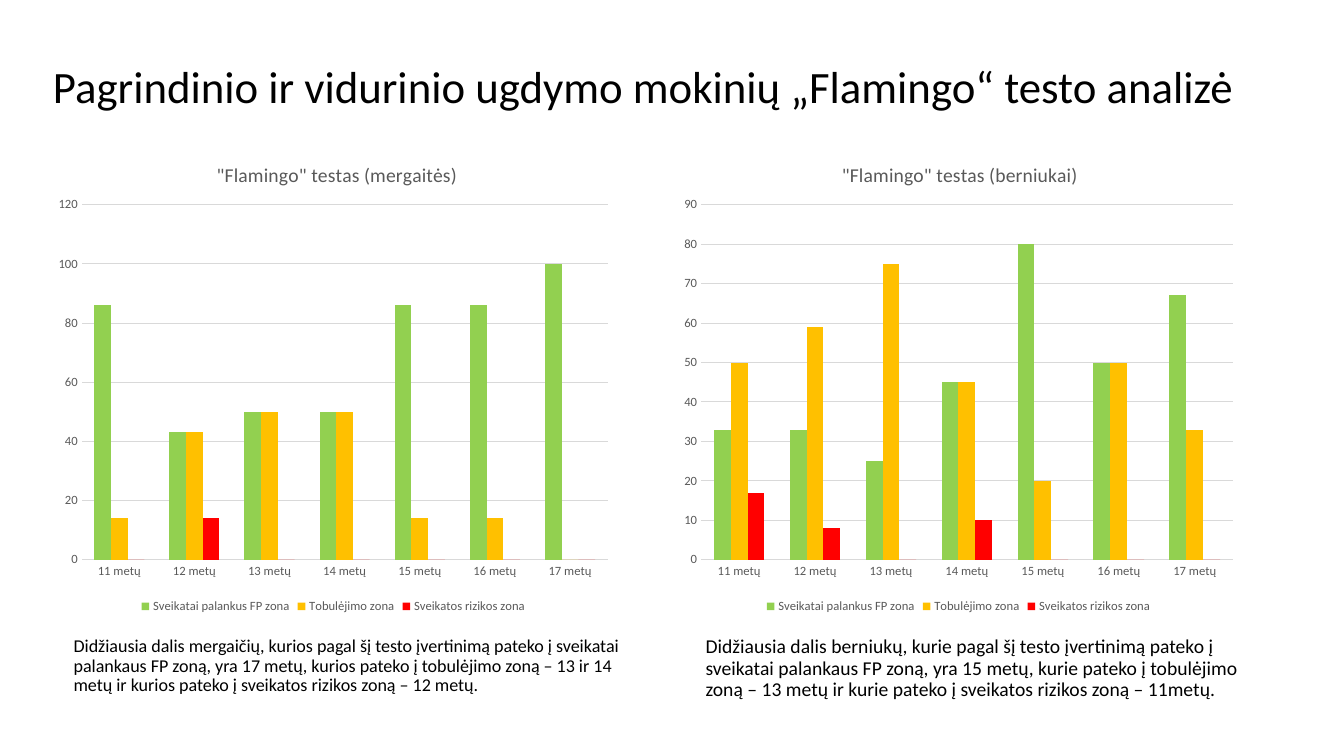
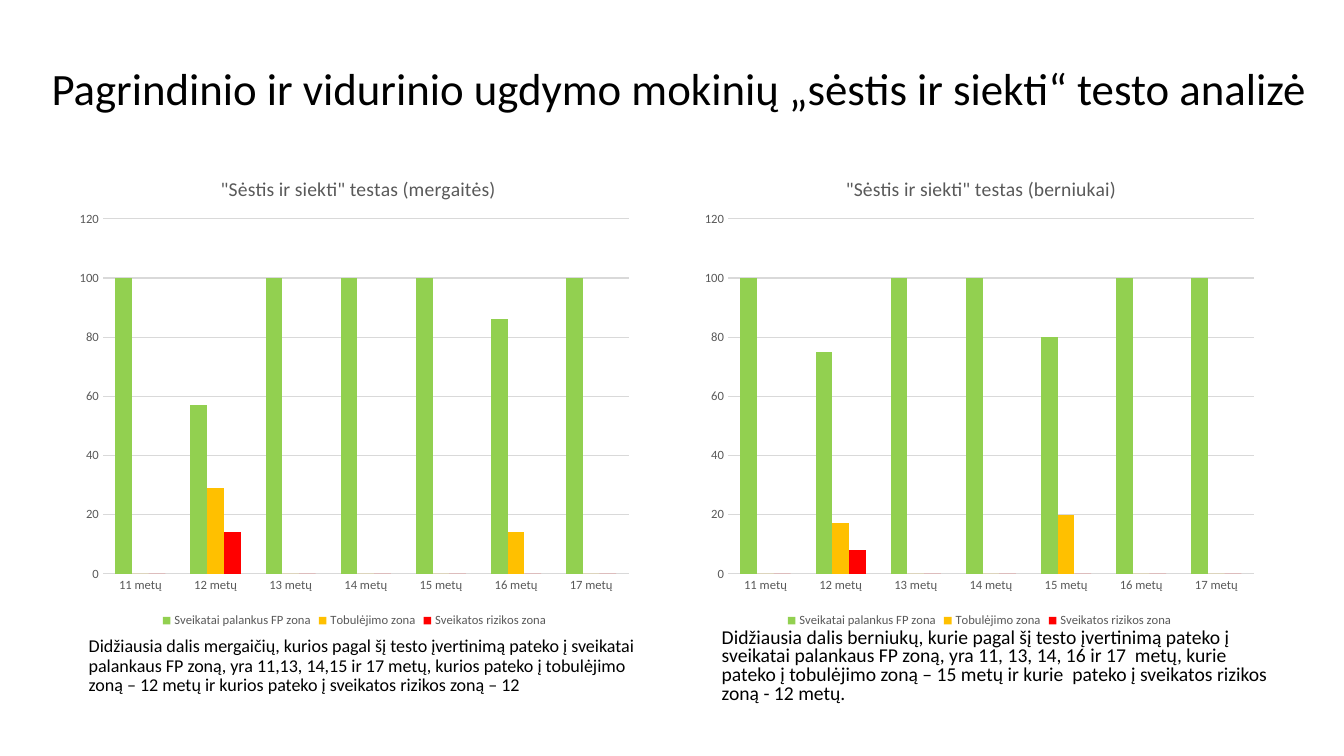
from dataclasses import dataclass

from lxml import etree
from pptx import Presentation
from pptx import util as u
from pptx.chart.data import CategoryChartData
from pptx.dml.color import RGBColor
from pptx.enum import chart as ch
from pptx.enum import text as tx
from pptx.oxml import ns


@dataclass(frozen=True)
class Theme:
    font: str = "Calibri"
    ink: str = "000000"
    muted: str = "595959"
    grid: str = "D9D9D9"
    zones: tuple = ("92D050", "FFC000", "FF0000")
    title_size: float = 32
    left_size: float = 12.9
    right_size: float = 14
    chart_title_size: float = 14
    label_size: float = 9


THEME = Theme()
AGES = [f"{age} metų" for age in range(11, 18)]
ZONES = ("Sveikatai palankus FP zona", "Tobulėjimo zona", "Sveikatos rizikos zona")
CHART_WIDTH, CHART_HEIGHT, CHART_STEP = 5.67, 4.76, 6.2

# Content: every chart has one row of values per zone
SLIDES = [
    dict(
        title="Pagrindinio ir vidurinio ugdymo mokinių „Flamingo“ testo analizė",
        title_box=(0.35, 0.4, 12.07, 0.97),
        charts_at=(0.47, 1.37),
        chart_title_x=0.29,
        charts=[
            dict(title='"Flamingo" testas (mergaitės)', top=120, unit=20,
                 rows=[(86, 43, 50, 50, 86, 86, 100),
                       (14, 43, 50, 50, 14, 14, 0),
                       (0, 14, 0, 0, 0, 0, 0)]),
            dict(title='"Flamingo" testas (berniukai)', top=90, unit=10,
                 rows=[(33, 33, 25, 45, 80, 50, 67),
                       (50, 59, 75, 45, 20, 50, 33),
                       (17, 8, 0, 10, 0, 0, 0)]),
        ],
        left="Didžiausia dalis mergaičių, kurios pagal šį testo įvertinimą pateko į "
             "sveikatai palankaus FP zoną, yra 17 metų, kurios pateko į tobulėjimo "
             "zoną – 13 ir 14 metų ir kurios pateko į sveikatos rizikos zoną – 12 metų.",
        left_box=(0.63, 6.27, 5.67, 0.84),
        right="Didžiausia dalis berniukų, kurie pagal šį testo įvertinimą pateko į "
              "sveikatai palankaus FP zoną, yra 15 metų, kurie pateko į tobulėjimo "
              "zoną – 13 metų ir kurie pateko į sveikatos rizikos zoną – 11metų.",
        right_box=(6.9, 6.27, 5.67, 0.83),
        right_spacing=0.9,
    ),
    dict(
        title="Pagrindinio ir vidurinio ugdymo mokinių „sėstis ir siekti“ testo analizė",
        title_box=(0.37, 0.4, 12.74, 1.01),
        charts_at=(0.68, 1.51),
        chart_title_x=0.26,
        charts=[
            dict(title='"Sėstis ir siekti" testas (mergaitės)', top=120, unit=20,
                 rows=[(100, 57, 100, 100, 100, 86, 100),
                       (0, 29, 0, 0, 0, 14, 0),
                       (0, 14, 0, 0, 0, 0, 0)]),
            dict(title='"Sėstis ir siekti" testas (berniukai)', top=120, unit=20,
                 rows=[(100, 75, 100, 100, 80, 100, 100),
                       (0, 17, 0, 0, 20, 0, 0),
                       (0, 8, 0, 0, 0, 0, 0)]),
        ],
        left="Didžiausia dalis mergaičių, kurios pagal šį testo įvertinimą pateko į "
             "sveikatai palankaus FP zoną, yra 11,13, 14,15 ir 17 metų, kurios pateko "
             "į tobulėjimo zoną – 12 metų ir kurios pateko į sveikatos rizikos zoną – 12",
        left_box=(0.78, 6.27, 5.67, 0.83),
        right="Didžiausia dalis berniukų, kurie pagal šį testo įvertinimą pateko į "
              "sveikatai palankaus FP zoną, yra 11, 13, 14, 16 ir 17  metų, kurie "
              "pateko į tobulėjimo zoną – 15 metų ir kurie  pateko į sveikatos "
              "rizikos zoną - 12 metų.",
        right_box=(7.06, 6.19, 5.67, 0.91),
        right_spacing=0.8,
    ),
]


# Text
def format_font(font, size, color):
    font.name = THEME.font
    font.size = u.Pt(size)
    font.bold = False
    font.color.rgb = RGBColor.from_string(color)


def write_text(shape, content, *, size, color=THEME.ink, align=tx.PP_ALIGN.LEFT,
               anchor=tx.MSO_ANCHOR.TOP, spacing=0.9):
    frame = shape.text_frame
    frame.word_wrap = True
    frame.auto_size = tx.MSO_AUTO_SIZE.NONE
    frame.vertical_anchor = anchor
    paragraph = frame.paragraphs[0]
    properties = paragraph._p.get_or_add_pPr()
    properties.set("marL", "0")
    properties.set("indent", "0")
    etree.SubElement(properties, ns.qn("a:buNone"))
    paragraph.alignment = align
    paragraph.line_spacing = spacing
    paragraph.space_before = u.Pt(0)
    run = paragraph.add_run()
    run.text = content
    format_font(run.font, size, color)


def place(shape, box):
    shape.left, shape.top, shape.width, shape.height = map(u.Inches, box)
    return shape


# Charts
def set_layout(parent, index, **fractions):
    """Place a chart part by fractions of the chart's size."""
    layout = parent.find(ns.qn("c:layout"))
    if layout is None:
        layout = etree.Element(ns.qn("c:layout"))
        parent.insert(index, layout)
    manual = etree.SubElement(layout, ns.qn("c:manualLayout"))
    if "w" in fractions:
        etree.SubElement(manual, ns.qn("c:layoutTarget")).set("val", "inner")
    for name in ("xMode", "yMode"):
        etree.SubElement(manual, ns.qn(f"c:{name}")).set("val", "edge")
    for name, value in fractions.items():
        etree.SubElement(manual, ns.qn(f"c:{name}")).set("val", f"{value:.3f}")


def format_axis(axis):
    axis.major_tick_mark = axis.minor_tick_mark = ch.XL_TICK_MARK.NONE
    axis.format.line.fill.background()
    format_font(axis.tick_labels.font, THEME.label_size, THEME.muted)


def add_zone_chart(slide, left, top, content, title_x):
    data = CategoryChartData()
    data.categories = AGES
    for zone, row in zip(ZONES, content["rows"]):
        data.add_series(zone, row)
    box = map(u.Inches, (left, top, CHART_WIDTH, CHART_HEIGHT))
    chart = slide.shapes.add_chart(
        ch.XL_CHART_TYPE.COLUMN_CLUSTERED, *box, data).chart
    format_font(chart.font, 10, THEME.ink)

    # Title
    chart.has_title = True
    paragraph = chart.chart_title.text_frame.paragraphs[0]
    run = paragraph.add_run()
    run.text = content["title"]
    format_font(run.font, THEME.chart_title_size, THEME.muted)
    chart.chart_title.include_in_layout = False
    title = chart.element.find(".//" + ns.qn("c:title"))
    set_layout(title, 1, x=title_x, y=0.04)

    # Plot and series
    plot_x = 0.06 if content["top"] > 100 else 0.05
    plot_area = chart.element.find(".//" + ns.qn("c:plotArea"))
    set_layout(plot_area, 0, x=plot_x, y=0.139, w=0.98 - plot_x, h=0.74)
    plot = chart.plots[0]
    plot.gap_width, plot.overlap = 150, 0
    plot.vary_by_categories = False
    for series, color in zip(plot.series, THEME.zones):
        series.format.fill.solid()
        series.format.fill.fore_color.rgb = RGBColor.from_string(color)

    # Axes and legend
    format_axis(chart.category_axis)
    axis = chart.value_axis
    format_axis(axis)
    axis.minimum_scale, axis.maximum_scale = 0, content["top"]
    axis.major_unit = content["unit"]
    axis.has_major_gridlines = True
    line = axis.major_gridlines.format.line
    line.width = u.Pt(0.75)
    line.color.rgb = RGBColor.from_string(THEME.grid)
    chart.has_legend = True
    chart.legend.position = ch.XL_LEGEND_POSITION.BOTTOM
    chart.legend.include_in_layout = False
    format_font(chart.legend.font, THEME.label_size, THEME.muted)


# Slides
def add_test_slide(presentation, content):
    slide = presentation.slides.add_slide(presentation.slide_layouts[1])
    write_text(place(slide.shapes.title, content["title_box"]), content["title"],
               size=THEME.title_size, align=tx.PP_ALIGN.CENTER,
               anchor=tx.MSO_ANCHOR.MIDDLE)
    write_text(place(slide.placeholders[1], content["left_box"]), content["left"],
               size=THEME.left_size)
    left, top = content["charts_at"]
    for column, chart in enumerate(content["charts"]):
        add_zone_chart(slide, left + column * CHART_STEP, top, chart,
                       content["chart_title_x"])
    caption = slide.shapes.add_textbox(*map(u.Inches, content["right_box"]))
    write_text(caption, content["right"], size=THEME.right_size,
               spacing=content["right_spacing"])


def main():
    presentation = Presentation()
    presentation.slide_width = u.Inches(13.33)
    presentation.slide_height = u.Inches(7.5)
    for content in SLIDES:
        add_test_slide(presentation, content)
    presentation.save("out.pptx")


if __name__ == "__main__":
    main()
